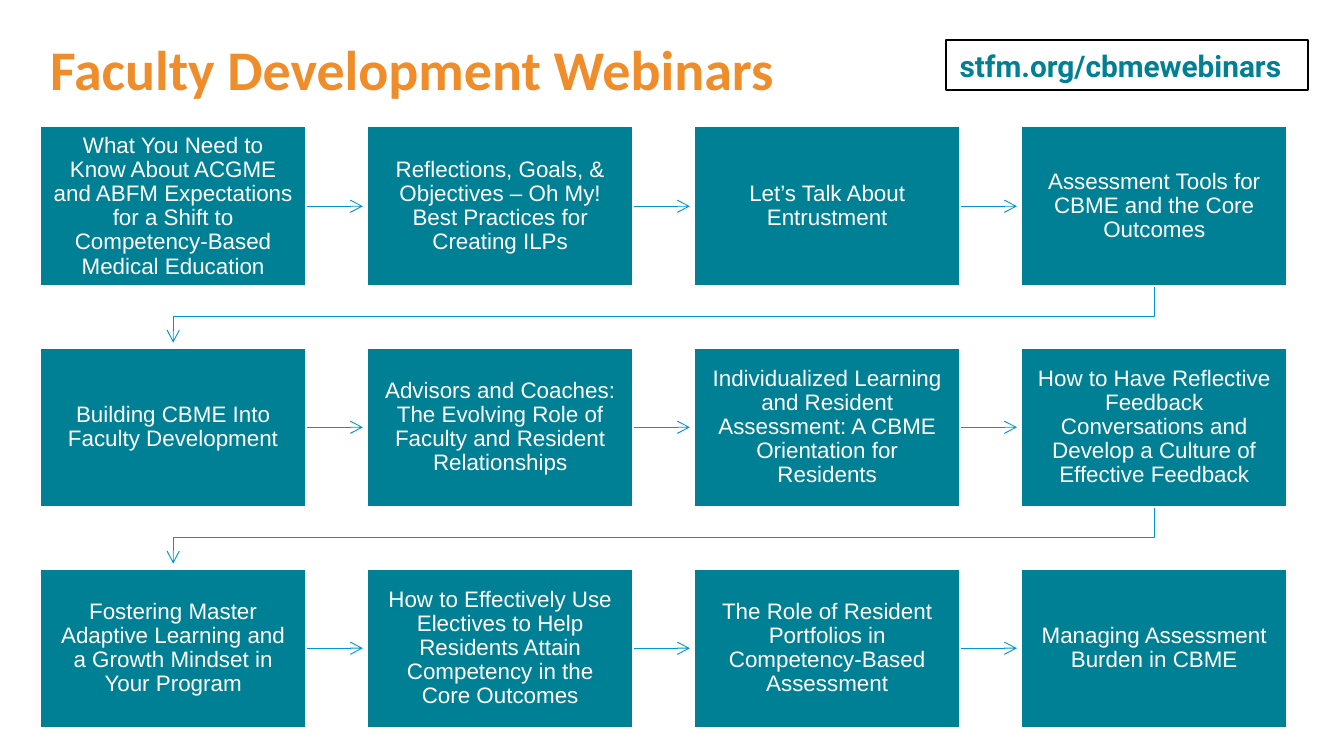
from lxml import etree
from pptx import Presentation
from pptx.dml.color import RGBColor
from pptx.enum.shapes import MSO_CONNECTOR, MSO_SHAPE
from pptx.enum.text import MSO_ANCHOR, PP_ALIGN
from pptx.oxml.ns import qn
from pptx.util import Pt

RECTANGLE = MSO_SHAPE.RECTANGLE
STRAIGHT = MSO_CONNECTOR.STRAIGHT
MIDDLE = MSO_ANCHOR.MIDDLE
LEFT, CENTER = PP_ALIGN.LEFT, PP_ALIGN.CENTER
TITLE_ONLY = 5

COLORS = {
    "orange": "EF8D2B",
    "teal": "008094",
    "blue": "0096D3",
    "white": "FFFFFF",
    "black": "000000",
}

CARD_LEFT, CARD_TOP = 21.6, 67.8
CARD_WIDTH, CARD_HEIGHT = 142.4, 85.4
COLUMN_STEP, ROW_STEP = 175.2, 118.4
ARROW_LENGTH = 30.4

WEBINARS = [
    [
        "What You Need to Know About ACGME and ABFM Expectations for a Shift to Competency-Based Medical Education",
        "Reflections, Goals, & Objectives – Oh My! Best Practices for Creating ILPs",
        "Let’s Talk About Entrustment",
        "Assessment Tools for CBME and the Core Outcomes",
    ],
    [
        "Building CBME Into Faculty Development",
        "Advisors and Coaches: The Evolving Role of Faculty and Resident Relationships",
        "Individualized Learning and Resident Assessment: A CBME Orientation for Residents",
        "How to Have Reflective Feedback Conversations and Develop a Culture of Effective Feedback",
    ],
    [
        "Fostering Master Adaptive Learning and a Growth Mindset in Your Program",
        "How to Effectively Use Electives to Help Residents Attain Competency in the Core Outcomes",
        "The Role of Resident Portfolios in Competency-Based Assessment",
        "Managing Assessment Burden in CBME",
    ],
]


class WebinarPage:
    """Holds the style and the current slide, and draws each kind of element."""

    formats = {
        "title": {"name": "Calibri", "size": Pt(30), "bold": True},
        "card": {"name": "Arial", "size": Pt(12), "bold": False},
        "address": {"name": "Roboto", "size": Pt(16), "bold": True},
    }

    def __init__(self, deck):
        self.page = deck.slides.add_slide(deck.slide_layouts[TITLE_ONLY])

    def color(self, name):
        return RGBColor.from_string(COLORS[name])

    def add_text(self, box, text, style, color, align, spacing=1.0, inset=3.6):
        frame = box.text_frame
        layout = {
            "word_wrap": True,
            "vertical_anchor": MIDDLE,
            "margin_left": Pt(7.2),
            "margin_right": Pt(7.2),
            "margin_top": Pt(inset),
            "margin_bottom": Pt(inset),
        }
        for name, value in layout.items():
            setattr(frame, name, value)
        para = frame.paragraphs[0]
        para.alignment = align
        para.line_spacing = spacing
        span = para.add_run()
        span.text = text
        for name, value in self.formats[style].items():
            setattr(span.font, name, value)
        span.font.color.rgb = self.color(color)

    def title(self, text, left, top, width, height):
        box = self.page.shapes.title
        place = {"left": left, "top": top, "width": width, "height": height}
        for name, value in place.items():
            setattr(box, name, Pt(value))
        self.add_text(box, text, "title", "orange", LEFT, spacing=0.9)

    def rectangle(self, left, top, width, height, line):
        box = self.page.shapes.add_shape(
            RECTANGLE, Pt(left), Pt(top), Pt(width), Pt(height)
        )
        box.shadow.inherit = False
        box.line.color.rgb = self.color(line)
        box.line.width = Pt(1)
        return box

    def card(self, text, left, top):
        box = self.rectangle(left, top, CARD_WIDTH, CARD_HEIGHT, "white")
        box.fill.solid()
        box.fill.fore_color.rgb = self.color("teal")
        self.add_text(box, text, "card", "white", CENTER, spacing=0.9, inset=7.2)

    def address(self, text, left, top, width, height):
        box = self.rectangle(left, top, width, height, "black")
        box.fill.background()
        self.add_text(box, text, "address", "teal", LEFT)

    def finish_arrow(self, arrow):
        arrow.line.color.rgb = self.color("blue")
        arrow.line.width = Pt(0.5)
        properties = arrow._element.spPr
        outline = properties.find(qn("a:ln"))
        etree.SubElement(outline, qn("a:tailEnd"), type="arrow")
        etree.SubElement(properties, qn("a:effectLst"))

    def arrow(self, left, middle):
        arrow = self.page.shapes.add_connector(
            STRAIGHT, Pt(left), Pt(middle), Pt(left + ARROW_LENGTH), Pt(middle)
        )
        self.finish_arrow(arrow)

    def row_arrow(self, start, end, top):
        bend, bottom = top + 16.6, top + ARROW_LENGTH
        builder = self.page.shapes.build_freeform(Pt(start), Pt(top))
        corners = [(start, bend), (end, bend), (end, bottom)]
        builder.add_line_segments([(Pt(x), Pt(y)) for x, y in corners], close=False)
        arrow = builder.convert_to_shape()
        arrow.fill.background()
        self.finish_arrow(arrow)


def main():
    deck = Presentation()
    deck.slide_width, deck.slide_height = Pt(720), Pt(405)
    page = WebinarPage(deck)
    page.title("Faculty Development Webinars", 19.6, 17, 638, 43.2)

    last_row, last_column = len(WEBINARS) - 1, len(WEBINARS[0]) - 1
    first_center = CARD_LEFT + CARD_WIDTH / 2
    for row, names in enumerate(WEBINARS):
        top = CARD_TOP + row * ROW_STEP
        for column, name in enumerate(names):
            left = CARD_LEFT + column * COLUMN_STEP
            if column < last_column:
                page.arrow(left + CARD_WIDTH, top + CARD_HEIGHT / 2)
            elif row < last_row:
                center = left + CARD_WIDTH / 2
                page.row_arrow(center, first_center, top + CARD_HEIGHT)
            page.card(name, left, top)

    page.address("stfm.org/cbmewebinars", 507, 21.6, 193.6, 26.8)
    deck.save("out.pptx")


if __name__ == "__main__":
    main()
